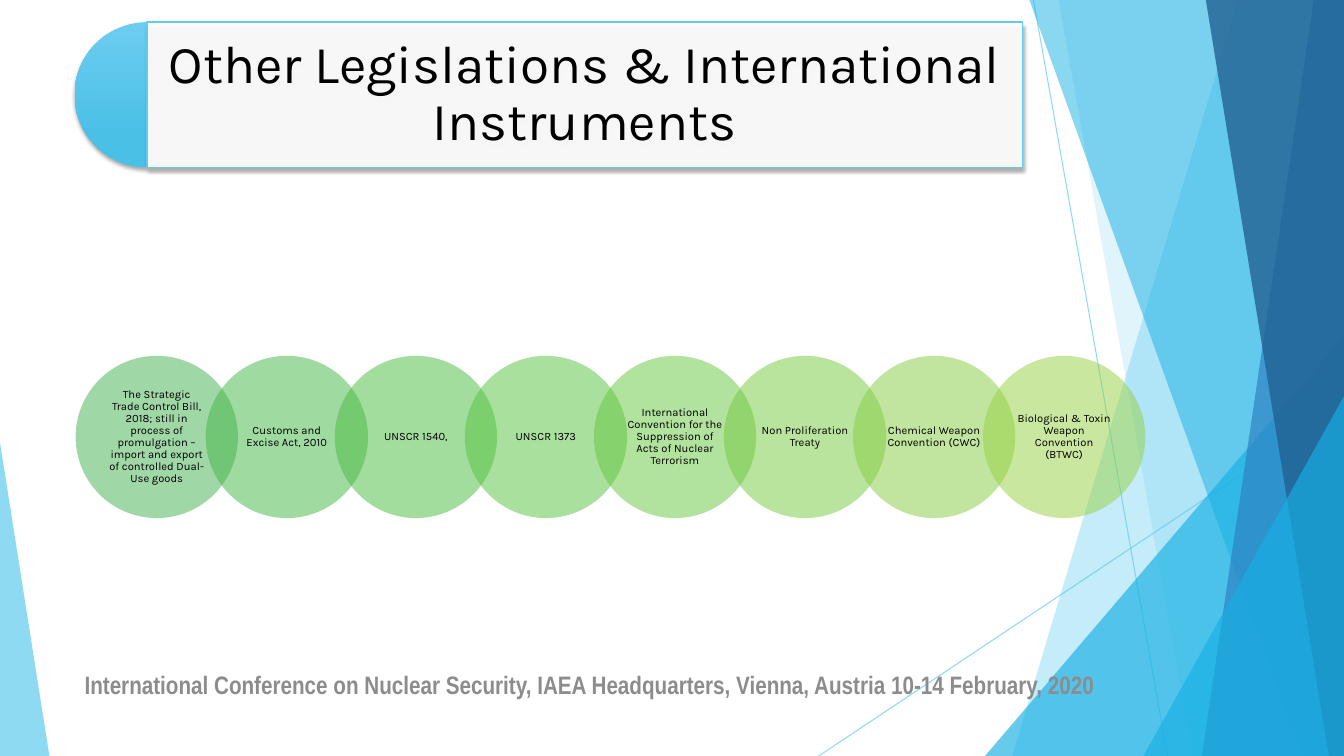
from lxml import etree
from pptx import Presentation
from pptx.dml.color import RGBColor
from pptx.enum.shapes import MSO_CONNECTOR, MSO_SHAPE
from pptx.enum.text import MSO_ANCHOR, PP_ALIGN
from pptx.oxml.ns import qn
from pptx.util import Pt

PX = 9144
STRAIGHT = MSO_CONNECTOR.STRAIGHT
TRIANGLE = MSO_SHAPE.ISOSCELES_TRIANGLE
PIE, RECT, OVAL = MSO_SHAPE.PIE, MSO_SHAPE.RECTANGLE, MSO_SHAPE.OVAL
MIDDLE = MSO_ANCHOR.MIDDLE
LEFT, CENTER = PP_ALIGN.LEFT, PP_ALIGN.CENTER

SKY, AZURE, BLUE, NAVY = "5FCBEF", "17B0E4", "2E83C3", "226292"
INSTRUMENTS = [
    ("The Strategic Trade Control Bill, 2018; still in process of promulgation "
     "–import and export of controlled Dual-Use goods", "42B051"),
    ("Customs and Excise Act, 2010", "41B644"),
    ("UNSCR 1540,", "48BC3F"),
    ("UNSCR 1373", "55C23E"),
    ("International Convention for the Suppression of Acts of Nuclear Terrorism", "64C63E"),
    ("Non Proliferation Treaty", "74CA3F"),
    ("Chemical Weapon Convention (CWC)", "85CD40"),
    ("Biological & Toxin Weapon Convention (BTWC)", "96D141"),
]


def color(hex_code):
    """Turn a hex string into a colour."""
    return RGBColor.from_string(hex_code)


def set_alpha(fill_owner, percent):
    """Make the first solid colour inside an element translucent."""
    tint = next(fill_owner.iter(qn("a:srgbClr")))
    etree.SubElement(tint, qn("a:alpha"), val=str(percent * 1000))


def paint(shape, hex_code, alpha):
    """Give a shape a flat translucent fill without outline or shadow."""
    shape.fill.solid()
    shape.fill.fore_color.rgb = color(hex_code)
    set_alpha(shape.fill._xPr, alpha)
    shape.line.fill.background()
    shape.shadow.inherit = False


def cast_shadow(shape):
    """Add a soft shadow below a shape."""
    shape.shadow.inherit = False
    effects = shape._element.spPr.find(qn("a:effectLst"))
    outer = etree.SubElement(effects, qn("a:outerShdw"), blurRad=str(Pt(3)),
                             dist=str(Pt(2)), dir="5400000", rotWithShape="0")
    black = etree.SubElement(outer, qn("a:srgbClr"), val="000000")
    etree.SubElement(black, qn("a:alpha"), val="35000")


def add_preset(slide, preset, box, adjustments=()):
    """Place a preset shape in a px box."""
    shape = slide.shapes.add_shape(preset, *(length * PX for length in box))
    for index, value in enumerate(adjustments):
        shape.adjustments[index] = value
    return shape


def write(shape, text, size, font, hex_code, align, insets, bold=False):
    """Write one paragraph centred vertically in a shape."""
    frame = shape.text_frame
    frame.word_wrap = True
    frame.vertical_anchor = MIDDLE
    side, top = insets
    frame.margin_left = frame.margin_right = side * PX
    frame.margin_top = frame.margin_bottom = top * PX
    paragraph = frame.paragraphs[0]
    paragraph.alignment = align
    paragraph.line_spacing = 0.9
    run = paragraph.add_run()
    run.text = text
    run.font.size = Pt(size)
    run.font.name = font
    run.font.bold = bold
    run.font.color.rgb = color(hex_code)


def add_ray(slide, start, end):
    """Draw a thin translucent line."""
    ray = slide.shapes.add_connector(STRAIGHT, *(value * PX for value in start + end))
    ray.line.color.rgb = color(SKY)
    ray.line.width = Pt(0.75)
    set_alpha(ray.line._ln, 70)
    etree.SubElement(ray._element.spPr, qn("a:effectLst"))


def add_panel(slide, box, top_left, bottom_left, hex_code, alpha):
    """Draw a slanted panel that reaches the right edge of the box."""
    left, top, width, height = box
    right, bottom = left + width, top + height
    outline = slide.shapes.build_freeform(left + top_left, top, scale=PX)
    outline.add_line_segments([(right, top), (right, bottom), (left + bottom_left, bottom)])
    paint(outline.convert_to_shape(), hex_code, alpha)


def add_corner(slide, box, width, height, apex, hex_code, alpha):
    """Draw a right triangle in a lower corner, its apex at the outer edge."""
    left, top, full_width, full_height = box
    x = left + apex * (full_width - width)
    corner = add_preset(slide, TRIANGLE, (x, top + full_height - height, width, height), [apex])
    paint(corner, hex_code, alpha)


def add_facets(slide, box):
    """Draw the layered blue facets at the edges of the slide."""
    left, top, width, height = box
    right, bottom = left + width, top + height
    add_ray(slide, (left + 1025, top), (left + 1158, bottom))
    add_ray(slide, (right, top + 403), (left + 812, bottom))
    add_panel(slide, box, 1228, 1004, SKY, 36)
    add_panel(slide, box, 1050, 1183, SKY, 20)
    add_corner(slide, box, 356, 417, 1, AZURE, 66)
    add_panel(slide, box, 1021, 1291, AZURE, 50)
    add_panel(slide, box, 1303, 1192, BLUE, 70)
    add_panel(slide, box, 1196, 1318, NAVY, 80)
    add_corner(slide, box, 199, 357, 1, AZURE, 66)
    add_corner(slide, box, 49, 311, 0, SKY, 70)


def add_title(slide, box):
    """Draw the title plate with its half-round cap."""
    left, top, width, height = box
    cap = add_preset(slide, PIE, (left, top, height, height), [54, 162])
    cap.fill.gradient()
    cap.fill.gradient_angle = 270
    for stop, (position, hex_code) in zip(cap.fill.gradient_stops,
                                          [(0, "6CCDF0"), (0.78, "4BC0E6")]):
        stop.position = position
        stop.color.rgb = color(hex_code)
    cap.line.fill.background()
    cast_shadow(cap)

    radius = height // 2
    plate = add_preset(slide, RECT, (left + radius, top, width - radius, height))
    paint(plate, "FFFFFF", 90)
    plate.line.color.rgb = color(SKY)
    plate.line.width = Pt(1)
    cast_shadow(plate)
    write(plate, "Other Legislations & International Instruments",
          38, "Karla", "000000", CENTER, (16, 16))


def add_chain(slide, box):
    """Draw the instruments as a row of overlapping circles."""
    left, top, width, diameter = box
    for index, (instrument, hex_code) in enumerate(INSTRUMENTS):
        x = left + round(index * (width - diameter) / (len(INSTRUMENTS) - 1))
        circle = add_preset(slide, OVAL, (x, top, diameter, diameter))
        paint(circle, hex_code, 50)
        write(circle, instrument, 8, "Karla", "000000", CENTER, (9, 1))


def add_footer(slide, box):
    """Write the conference line."""
    conference = slide.shapes.add_textbox(*(length * PX for length in box))
    write(conference, "International Conference on Nuclear Security, IAEA Headquarters, "
          "Vienna, Austria 10-14 February, 2020",
          18, "Arial Narrow", "8C8C8C", LEFT, (10, 5), bold=True)


def main():
    """Build the slide and save it."""
    deck = Presentation()
    deck.slide_width, deck.slide_height = 1333 * PX, 750 * PX
    slide = deck.slides.add_slide(deck.slide_layouts[6])
    add_facets(slide, (0, 0, 1333, 750))
    add_title(slide, (74, 22, 940, 144))
    add_footer(slide, (74, 661, 1072, 40))
    add_chain(slide, (75, 353, 1061, 161))
    deck.save("out.pptx")


if __name__ == "__main__":
    main()
